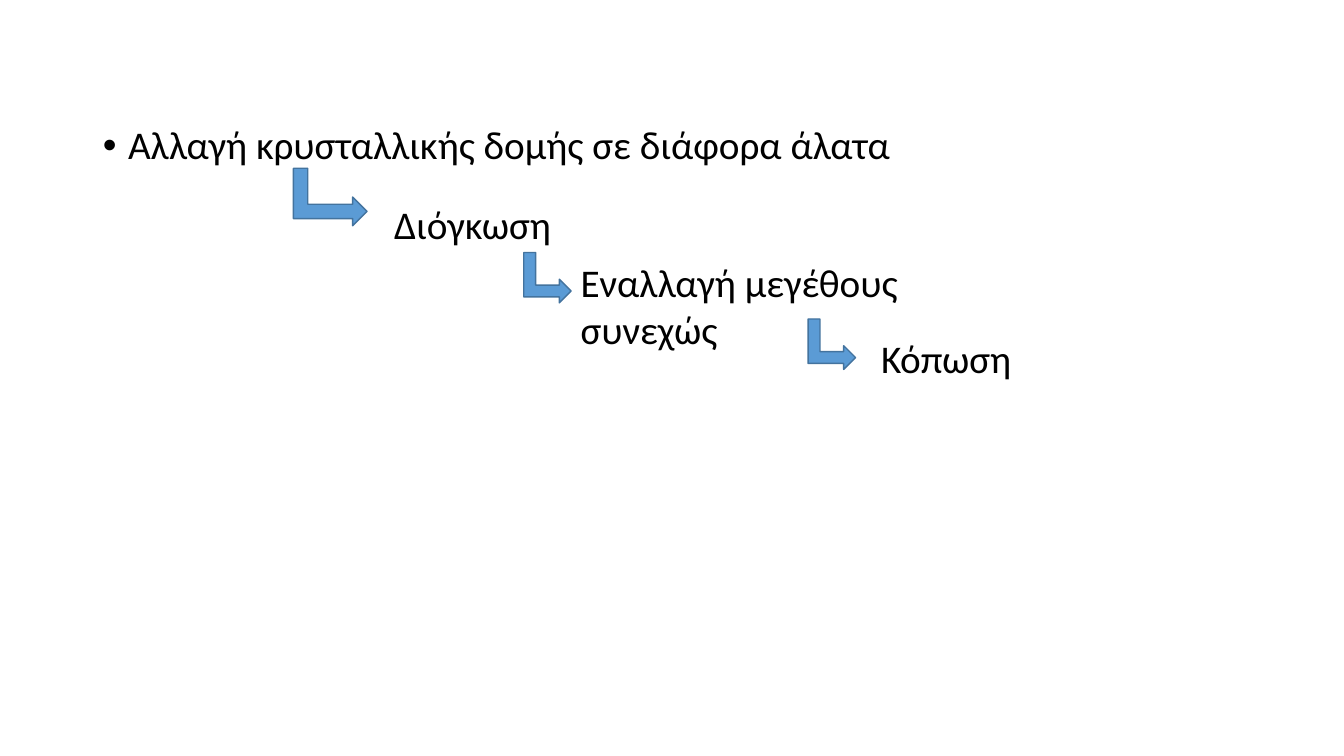
from dataclasses import dataclass

from lxml.etree import SubElement as Sub
from pptx import Presentation
from pptx.dml.color import RGBColor as Rgb
from pptx.enum.shapes import MSO_SHAPE as Kind
from pptx.enum.text import MSO_ANCHOR as Anchor, MSO_AUTO_SIZE as Fit
from pptx.oxml.ns import qn
from pptx.util import Pt


@dataclass(frozen=True)
class Theme:
    """Colours, font and type size of the slide."""
    ink: str = "000000"
    fill: str = "5B9BD5"
    edge: str = "43739E"
    font: str = "Calibri"
    size: int = 28


LOOK = Theme()
PX = 9144


def px(*vals):
    """Turn lengths at 100 px to the inch into EMU."""
    return [val * PX for val in vals]


def write(frame, text, wrap=True, fit=Fit.NONE, lead=None, bullet=None):
    """Fill a text frame with one formatted paragraph."""
    frame.word_wrap, frame.auto_size = wrap, fit
    frame.vertical_anchor = Anchor.TOP
    para = frame.paragraphs[0]
    para.text = text
    para.space_before = 0
    if lead:
        para.line_spacing = lead
    if bullet:
        props = para._p.get_or_add_pPr()
        props.set("marL", str(25 * PX))
        props.set("indent", str(-25 * PX))
        Sub(props, qn("a:buFont"), typeface="Arial")
        Sub(props, qn("a:buChar"), char=bullet)
    font = para.runs[0].font
    font.name, font.size = LOOK.font, Pt(LOOK.size)
    font.color.rgb = Rgb.from_string(LOOK.ink)


def body(slide, text, box):
    """Place the bullet list in the body placeholder."""
    hold = slide.placeholders[1]
    hold.left, hold.top, hold.width, hold.height = px(*box)
    write(hold.text_frame, text, lead=0.9, bullet="•")


def label(slide, text, box, wrap=False):
    """Add the text of one step."""
    shape = slide.shapes.add_textbox(*px(*box))
    write(shape.text_frame, text, wrap=wrap, fit=Fit.SHAPE_TO_FIT_TEXT)


def arrow(slide, box):
    """Add a bent arrow that leads down and to the right."""
    shape = slide.shapes.add_shape(Kind.BENT_UP_ARROW, *px(*box))
    shape.rotation = 90
    shape.shadow.inherit = False
    shape.fill.solid()
    shape.fill.fore_color.rgb = Rgb.from_string(LOOK.fill)
    shape.line.color.rgb = Rgb.from_string(LOOK.edge)
    shape.line.width = Pt(1)


def main():
    """Build the slide and save it."""
    deck = Presentation()
    deck.slide_width, deck.slide_height = px(1333, 750)
    slide = deck.slides.add_slide(deck.slide_layouts[1])
    title = slide.shapes.title._element
    title.getparent().remove(title)

    body(slide, "Αλλαγή κρυσταλλικής δομής σε διάφορα άλατα", (92, 120, 1150, 555))
    steps = [
        ("Διόγκωση", (299, 159, 57, 73), (381, 194, 177, 57), False),
        ("Εναλλαγή μεγέθους συνεχώς", (518, 252, 50, 47), (566, 251, 427, 104), True),
        ("Κόπωση", (800, 318, 50, 47), (864, 327, 151, 57), False),
    ]
    for text, bend, box, wrap in steps:
        arrow(slide, bend)
        label(slide, text, box, wrap)
    deck.save("out.pptx")


if __name__ == "__main__":
    main()
